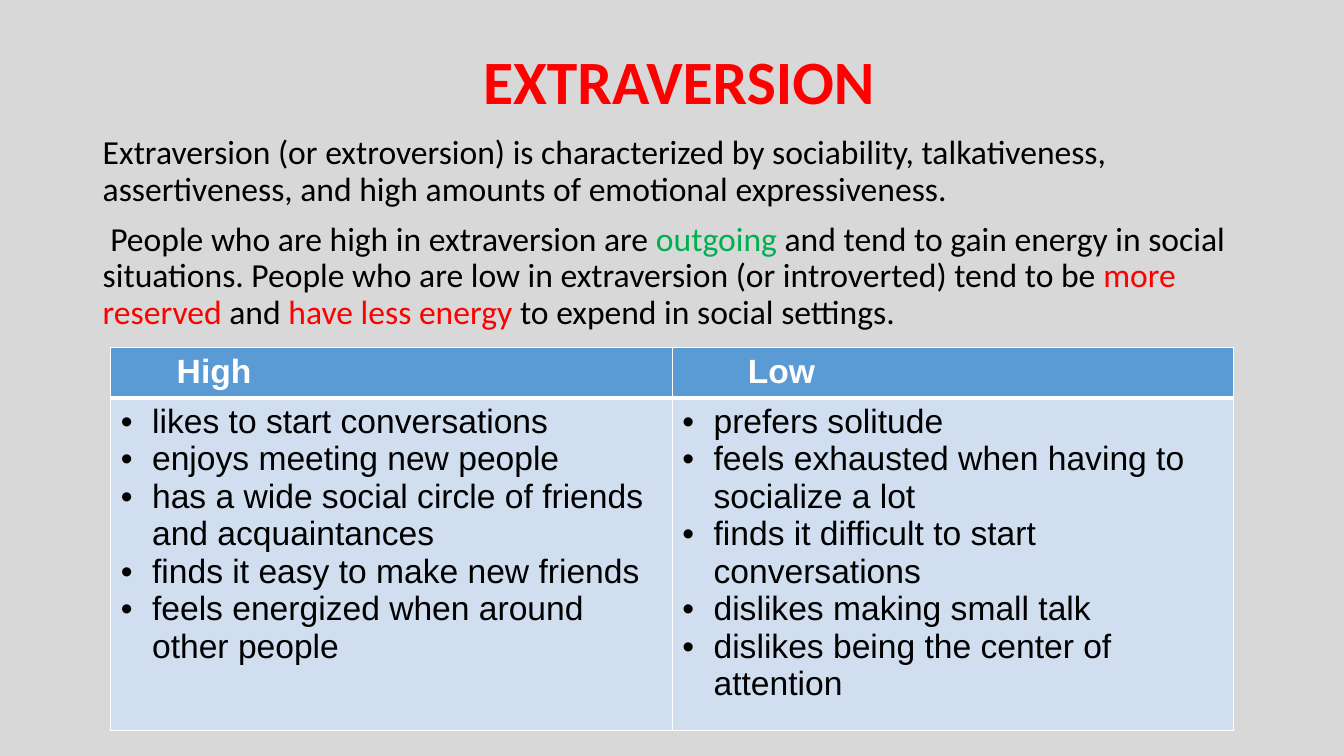
import dataclasses

import pptx
import pptx.dml.color
import pptx.enum.text
import pptx.oxml.ns
import pptx.util
from lxml import etree

Cm = pptx.util.Cm
Pt = pptx.util.Pt
qn = pptx.oxml.ns.qn


@dataclasses.dataclass(frozen=True)
class Theme:
    page: str = "D8D8D8"
    black: str = "000000"
    white: str = "FFFFFF"
    red: str = "FF0000"
    green: str = "00B050"
    header: str = "5B9BD5"
    body: str = "D0DEEF"
    title_size: int = 44
    text_size: int = 24
    text_font: str = "Calibri"
    table_font: str = "Arial"


THEME = Theme()

INTRO = [
    (0, [("Extraversion (or extroversion) is characterized by sociability, talkativeness, "
          "assertiveness, and high amounts of emotional expressiveness.", THEME.black)]),
    (0.19, [
        ("People who are high in extraversion are ", THEME.black),
        ("outgoing", THEME.green),
        (" and tend to gain energy in social situations. People who are low in extraversion "
         "(or introverted) tend to be ", THEME.black),
        ("more reserved ", THEME.red),
        ("and ", THEME.black),
        ("have less energy ", THEME.red),
        ("to expend in social settings.", THEME.black),
    ]),
]

TRAITS = [
    ("High", 1.41, [
        "likes to start conversations",
        "enjoys meeting new people",
        "has a wide social circle of friends and acquaintances",
        "finds it easy to make new friends",
        "feels energized when around other people",
    ]),
    ("Low", 1.65, [
        "prefers solitude",
        "feels exhausted when having to socialize a lot",
        "finds it difficult to start conversations",
        "dislikes making small talk",
        "dislikes being the center of attention",
    ]),
]


def rgb(colour):
    return pptx.dml.color.RGBColor.from_string(colour)


def style(para, font, size, colour=None, bold=False):
    para.font.name = font
    para.font.size = Pt(size)
    para.font.bold = bold
    if colour:
        para.font.color.rgb = rgb(colour)


def indent(para, left, first=0):
    properties = para._p.get_or_add_pPr()
    properties.set("marL", str(Cm(left)))
    properties.set("indent", str(Cm(first)))
    return properties


def add_text_box(page, left, top, width, height):
    box = page.shapes.add_textbox(Cm(left), Cm(top), Cm(width), Cm(height))
    box.text_frame.word_wrap = True
    return box.text_frame


def add_title(page, text):
    frame = add_text_box(page, 2.51, 0.28, 29.21, 3.68)
    frame.vertical_anchor = pptx.enum.text.MSO_ANCHOR.MIDDLE
    para = frame.paragraphs[0]
    para.text = text
    para.alignment = pptx.enum.text.PP_ALIGN.CENTER
    para.line_spacing = 0.9
    style(para, THEME.text_font, THEME.title_size, THEME.red, True)


def add_intro(page):
    frame = add_text_box(page, 2.34, 3.3, 29.21, 5.3)
    for index, (first, spans) in enumerate(INTRO):
        para = frame.add_paragraph() if index else frame.paragraphs[0]
        para.line_spacing = 0.9
        para.space_before = Pt(10 if index else 0)
        indent(para, 0, first)
        style(para, THEME.text_font, THEME.text_size)
        for text, colour in spans:
            span = para.add_run()
            span.text = text
            span.font.color.rgb = rgb(colour)


def paint_cell(cell, fill, top, bottom):
    properties = cell._tc.get_or_add_tcPr()
    for side, width in (("L", 1), ("R", 1), ("T", top), ("B", bottom)):
        line = etree.SubElement(properties, qn(f"a:ln{side}"), w=str(Pt(width)))
        solid = etree.SubElement(line, qn("a:solidFill"))
        etree.SubElement(solid, qn("a:srgbClr"), val=THEME.white)
    cell.fill.solid()
    cell.fill.fore_color.rgb = rgb(fill)


def add_bullet(para):
    properties = indent(para, 0.79, -0.79)
    etree.SubElement(properties, qn("a:buFont"), typeface=THEME.table_font)
    etree.SubElement(properties, qn("a:buChar"), char="•")


def add_traits_table(page):
    table = page.shapes.add_table(
        2, len(TRAITS), Cm(2.79), Cm(8.76), Cm(28.3), Cm(8.99)).table
    table.rows[0].height = Cm(1.19)
    table.rows[1].height = Cm(7.8)
    for column, (heading, offset, traits) in enumerate(TRAITS):
        head, body = table.cell(0, column), table.cell(1, column)
        paint_cell(head, THEME.header, 1, 3)
        paint_cell(body, THEME.body, 3, 1)
        para = head.text_frame.paragraphs[0]
        para.text = heading
        indent(para, offset)
        style(para, THEME.table_font, THEME.text_size, THEME.white, True)
        body.text_frame.text = "\n".join(traits)
        for para in body.text_frame.paragraphs:
            style(para, THEME.table_font, THEME.text_size, THEME.black)
            add_bullet(para)


def main():
    deck = pptx.Presentation()
    deck.slide_width = Cm(33.87)
    deck.slide_height = Cm(19.05)
    page = deck.slides.add_slide(deck.slide_layouts[6])
    page.background.fill.solid()
    page.background.fill.fore_color.rgb = rgb(THEME.page)
    add_title(page, "EXTRAVERSION")
    add_intro(page)
    add_traits_table(page)
    deck.save("out.pptx")


if __name__ == "__main__":
    main()
